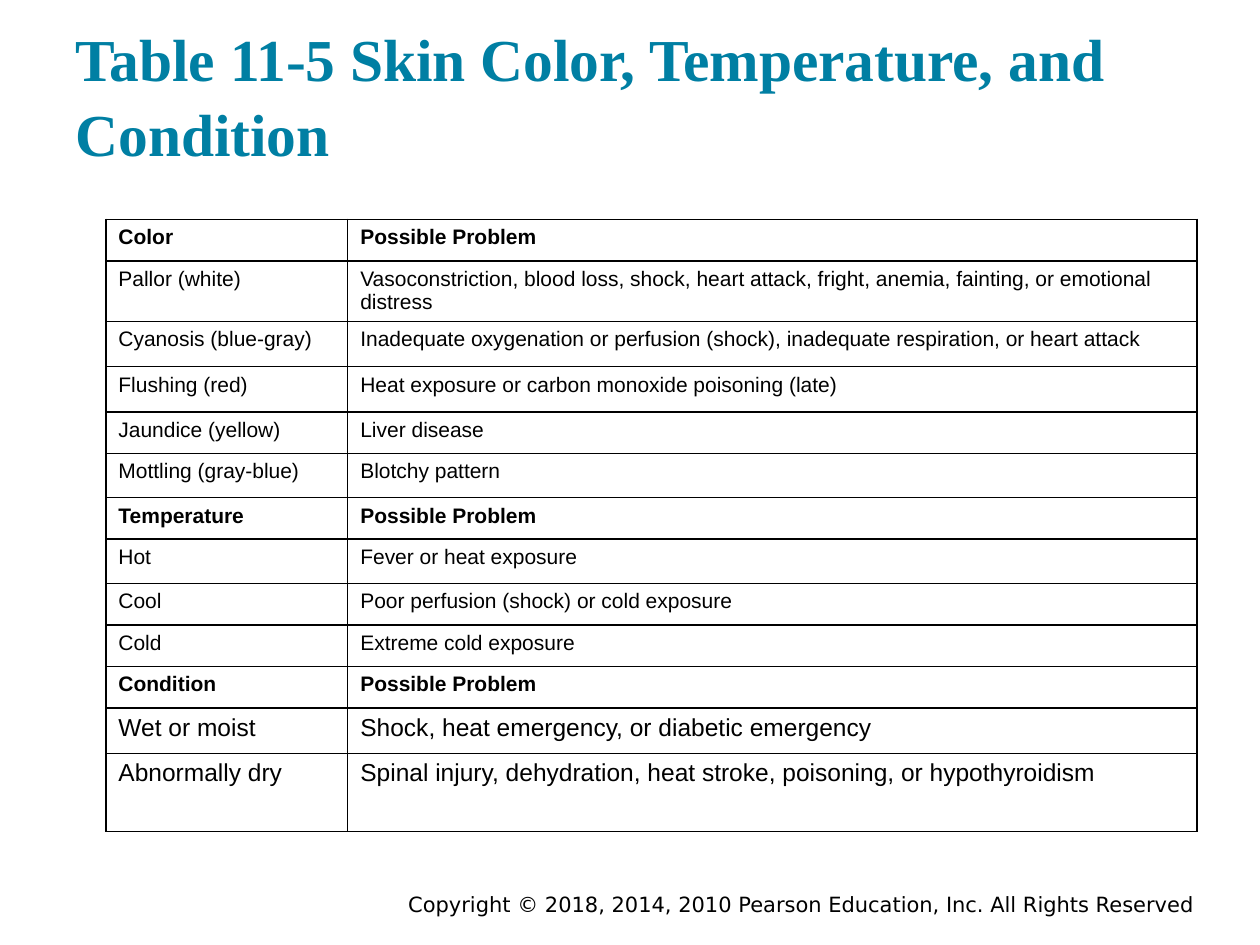
from lxml import etree
from pptx import Presentation
from pptx.dml.color import RGBColor
from pptx.enum.text import MSO_ANCHOR, PP_ALIGN
from pptx.oxml.ns import qn
from pptx.util import Inches, Pt

BOTTOM, MIDDLE = MSO_ANCHOR.BOTTOM, MSO_ANCHOR.MIDDLE
LEFT, RIGHT = PP_ALIGN.LEFT, PP_ALIGN.RIGHT

TEAL = RGBColor(0x00, 0x7F, 0xA3)
BLACK = RGBColor(0x00, 0x00, 0x00)

TITLE_BOX = [Inches(v) for v in (0.5, 0.24, 9, 1.2)]
TABLE_BOX = [Inches(v) for v in (0.84, 1.74, 8.66, 4.87)]
COPYRIGHT_BOX = [Inches(v) for v in (2.92, 7.05, 6.66, 0.25)]

COLUMN_WIDTHS = (1.92, 6.74)
PROBLEM = "Possible Problem"
HEADINGS = ("Color", "Temperature", "Condition")
SIGNS = [
    ("Color", PROBLEM, 0.33, 12),
    ("Pallor (white)",
     "Vasoconstriction, blood loss, shock, heart attack, fright, anemia, "
     "fainting, or emotional distress", 0.48, 12),
    ("Cyanosis (blue-gray)",
     "Inadequate oxygenation or perfusion (shock), inadequate respiration, "
     "or heart attack", 0.36, 12),
    ("Flushing (red)",
     "Heat exposure or carbon monoxide poisoning (late)", 0.36, 12),
    ("Jaundice (yellow)", "Liver disease", 0.33, 12),
    ("Mottling (gray-blue)", "Blotchy pattern", 0.35, 12),
    ("Temperature", PROBLEM, 0.33, 12),
    ("Hot", "Fever or heat exposure", 0.35, 12),
    ("Cool", "Poor perfusion (shock) or cold exposure", 0.33, 12),
    ("Cold", "Extreme cold exposure", 0.33, 12),
    ("Condition", PROBLEM, 0.33, 12),
    ("Wet or moist", "Shock, heat emergency, or diabetic emergency", 0.36, 14),
    ("Abnormally dry",
     "Spinal injury, dehydration, heat stroke, poisoning, or hypothyroidism",
     0.62, 14),
]


def set_font(paragraph, name, size, color, bold=False):
    font = paragraph.font
    font.name = name
    font.size = Pt(size)
    font.bold = bold
    font.color.rgb = color


def set_borders(cell, color, width):
    properties = cell._tc.get_or_add_tcPr()
    for position, side in enumerate(("a:lnL", "a:lnR", "a:lnT", "a:lnB")):
        line = etree.Element(qn(side), w=str(width))
        fill = etree.SubElement(line, qn("a:solidFill"))
        etree.SubElement(fill, qn("a:srgbClr"), val=str(color))
        properties.insert(position, line)


def add_title(slide, box):
    title = slide.shapes.title
    title.left, title.top, title.width, title.height = box
    frame = title.text_frame
    frame.text = "Table 11-5 Skin Color, Temperature, and Condition"
    frame.vertical_anchor = BOTTOM
    frame.margin_left = frame.margin_right = Inches(0.1)
    frame.margin_top = frame.margin_bottom = Inches(0.1)
    heading = frame.paragraphs[0]
    heading.alignment = LEFT
    heading.line_spacing = 1.05
    set_font(heading, "Times New Roman", 34, TEAL, bold=True)


def add_signs_table(slide, box):
    table = slide.shapes.add_table(len(SIGNS), len(COLUMN_WIDTHS), *box).table
    table.first_row = False
    table.horz_banding = False
    for column, width in zip(table.columns, COLUMN_WIDTHS):
        column.width = Inches(width)
    for row, (sign, problem, height, size) in zip(table.rows, SIGNS):
        row.height = Inches(height)
        for cell, text in zip(row.cells, (sign, problem)):
            cell.text = text
            cell.fill.background()
            set_borders(cell, BLACK, Pt(1))
            set_font(cell.text_frame.paragraphs[0], "Arial", size, BLACK,
                     bold=sign in HEADINGS)


def add_copyright(slide, box):
    frame = slide.shapes.add_textbox(*box).text_frame
    frame.word_wrap = True
    frame.vertical_anchor = MIDDLE
    frame.text = ("Copyright © 2018, 2014, 2010 Pearson Education, Inc. "
                  "All Rights Reserved")
    notice = frame.paragraphs[0]
    notice.alignment = RIGHT
    set_font(notice, "DejaVu Sans", 12, BLACK)


def main():
    presentation = Presentation()
    presentation.slide_width = Inches(10)
    presentation.slide_height = Inches(7.5)
    slide = presentation.slides.add_slide(presentation.slide_layouts[5])
    add_title(slide, TITLE_BOX)
    add_signs_table(slide, TABLE_BOX)
    add_copyright(slide, COPYRIGHT_BOX)
    presentation.save("out.pptx")


if __name__ == "__main__":
    main()
